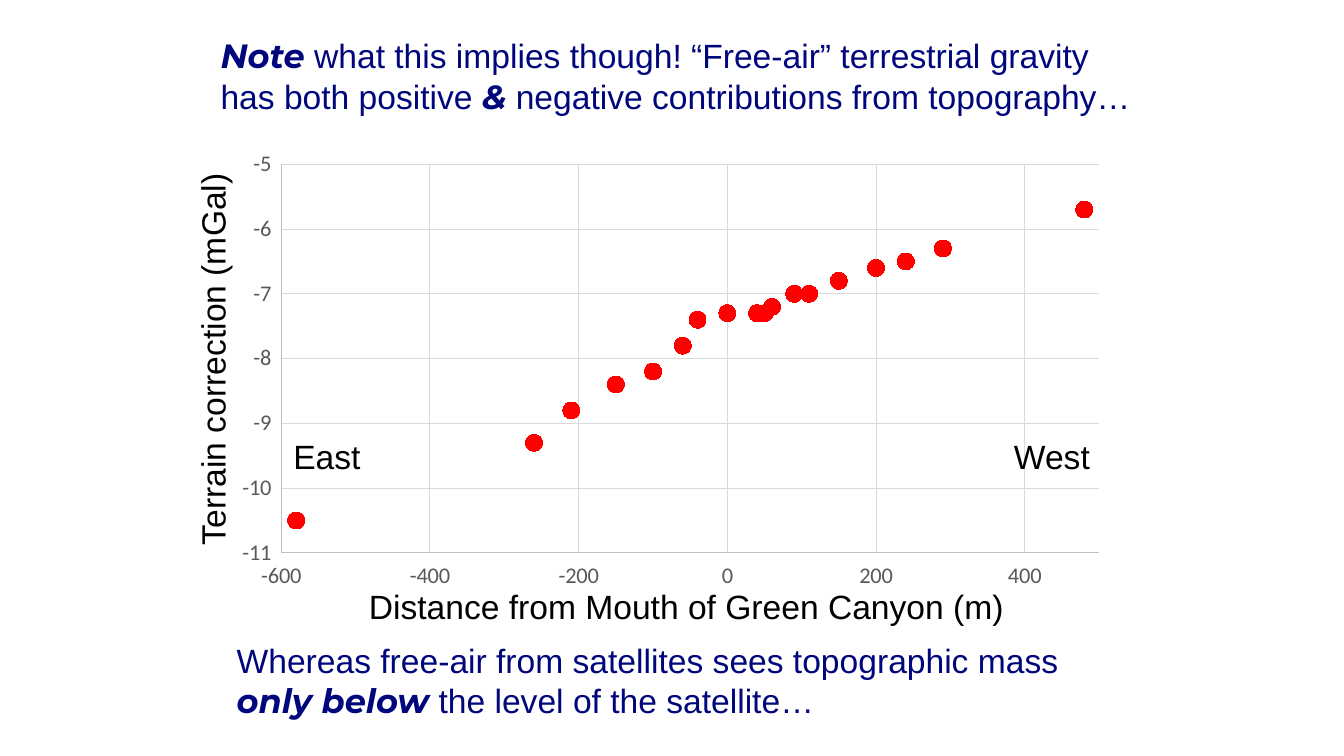
from lxml import etree
from pptx import Presentation
from pptx.chart.data import XyChartData
from pptx.dml.color import RGBColor
from pptx.enum.chart import (XL_AXIS_CROSSES, XL_CHART_TYPE, XL_MARKER_STYLE,
                             XL_TICK_LABEL_POSITION, XL_TICK_MARK)
from pptx.enum.text import MSO_AUTO_SIZE
from pptx.oxml.ns import qn
from pptx.util import Pt

SCATTER = XL_CHART_TYPE.XY_SCATTER
CIRCLE = XL_MARKER_STYLE.CIRCLE
AT_MINIMUM = XL_AXIS_CROSSES.MINIMUM
LABELS_LOW = XL_TICK_LABEL_POSITION.LOW
NO_TICK = XL_TICK_MARK.NONE
GROW = MSO_AUTO_SIZE.SHAPE_TO_FIT_TEXT

NAVY, BLACK, RED = "00067B", "000000", "FF0000"
AXIS_TEXT, AXIS_LINE, GRID_LINE = "595959", "BFBFBF", "D9D9D9"

DISTANCES = [-580, -260, -210, -150, -100, -60, -40, 0, 40, 50, 60, 60, 60,
             60, 90, 110, 150, 200, 240, 290, 480]
CORRECTIONS = [-10.5, -9.3, -8.8, -8.4, -8.2, -7.8, -7.4, -7.3, -7.3, -7.3,
               -7.2, -7.2, -7.2, -7.2, -7, -7, -6.8, -6.6, -6.5, -6.3, -5.7]


def color(value):
    return RGBColor.from_string(value)


def style_line(line, value):
    line.color.rgb = color(value)
    line.width = Pt(0.75)


def add_text(page, box, paragraphs, ink=BLACK, rotation=0):
    left, top, width, height = box
    label = page.shapes.add_textbox(Pt(left), Pt(top), Pt(width), Pt(height))
    label.rotation = rotation
    frame = label.text_frame
    frame.word_wrap = False
    frame.auto_size = GROW
    for index, spans in enumerate(paragraphs):
        para = frame.add_paragraph() if index else frame.paragraphs[0]
        for text, strong in spans:
            span = para.add_run()
            span.text = text
            span.font.name = "Montserrat" if strong else "Arial"
            span.font.size = Pt(24)
            span.font.bold = strong
            span.font.italic = strong
            span.font.color.rgb = color(ink)


def style_axis(axis, low, high, step):
    axis.minimum_scale = low
    axis.maximum_scale = high
    axis.major_unit = step
    axis.crosses = AT_MINIMUM
    axis.major_tick_mark = NO_TICK
    axis.minor_tick_mark = NO_TICK
    axis.tick_label_position = LABELS_LOW
    axis.tick_labels.number_format = "General"
    axis.tick_labels.number_format_is_linked = False
    font = axis.tick_labels.font
    font.name = "Calibri"
    font.size = Pt(16)
    font.color.rgb = color(AXIS_TEXT)
    axis.has_major_gridlines = True
    style_line(axis.major_gridlines.format.line, GRID_LINE)
    style_line(axis.format.line, AXIS_LINE)


def place_plot(chart, x, y, w, h):
    plot_area = chart.plots[0]._element.getparent()
    for old in plot_area.findall(qn("c:layout")):
        plot_area.remove(old)
    layout = etree.Element(qn("c:layout"))
    plot_area.insert(0, layout)
    manual = etree.SubElement(layout, qn("c:manualLayout"))
    settings = [("layoutTarget", "inner"), ("xMode", "edge"), ("yMode", "edge"),
                ("x", x), ("y", y), ("w", w), ("h", h)]
    for name, value in settings:
        etree.SubElement(manual, qn("c:" + name)).set("val", str(value))


def add_terrain_chart(page, box):
    left, top, width, height = box
    data = XyChartData()
    points = data.add_series("Terrain correction")
    for distance, correction in zip(DISTANCES, CORRECTIONS):
        points.add_data_point(distance, correction)
    chart = page.shapes.add_chart(SCATTER, Pt(left), Pt(top), Pt(width),
                                  Pt(height), data).chart
    chart.has_legend = False
    chart.has_title = False
    chart.font.name = "Calibri"
    chart.font.size = Pt(10)
    chart.font.color.rgb = color(BLACK)
    chart.plots[0].vary_by_categories = False
    style_axis(chart.category_axis, -600, 500, 200)
    style_axis(chart.value_axis, -11, -5, 1)
    series = chart.plots[0].series[0]
    series.smooth = False
    series.format.line.fill.background()
    marker = series.marker
    marker.style = CIRCLE
    marker.size = 12
    marker.format.fill.solid()
    marker.format.fill.fore_color.rgb = color(RED)
    style_line(marker.format.line, RED)
    place_plot(chart, 0.058, 0.049, 0.922, 0.859)

    add_text(page, (left - 154, top + 135.4, 283, 36),
             [[("Terrain correction (mGal)", False)]], rotation=270)
    add_text(page, (left + 92.2, top + 313.2, 472.3, 36),
             [[("Distance from Mouth of Green Canyon (m)", False)]])
    add_text(page, (left + 38.2, top + 206.6, 63.4, 36), [[("East", False)]])
    add_text(page, (left + 553, top + 206.6, 69.1, 36), [[("West", False)]])


def build_slide(deck):
    page = deck.slides.add_slide(deck.slide_layouts[6])
    add_terrain_chart(page, (164.2, 101.5, 633.6, 323.3))
    add_text(page, (150.5, 21.6, 676.8, 65.5), [
        [("Note", True),
         (" what this implies though! “Free-air” terrestrial gravity", False)],
        [("has both positive ", False), ("&", True),
         (" negative contributions from topography…", False)],
    ], NAVY)
    add_text(page, (162, 453.6, 607.7, 65.5), [
        [("Whereas free-air from satellites sees topographic mass", False)],
        [("only below ", True), ("the level of the satellite…", False)],
    ], NAVY)


def main():
    deck = Presentation()
    deck.slide_width = Pt(960)
    deck.slide_height = Pt(540)
    build_slide(deck)
    deck.save("out.pptx")


if __name__ == "__main__":
    main()
